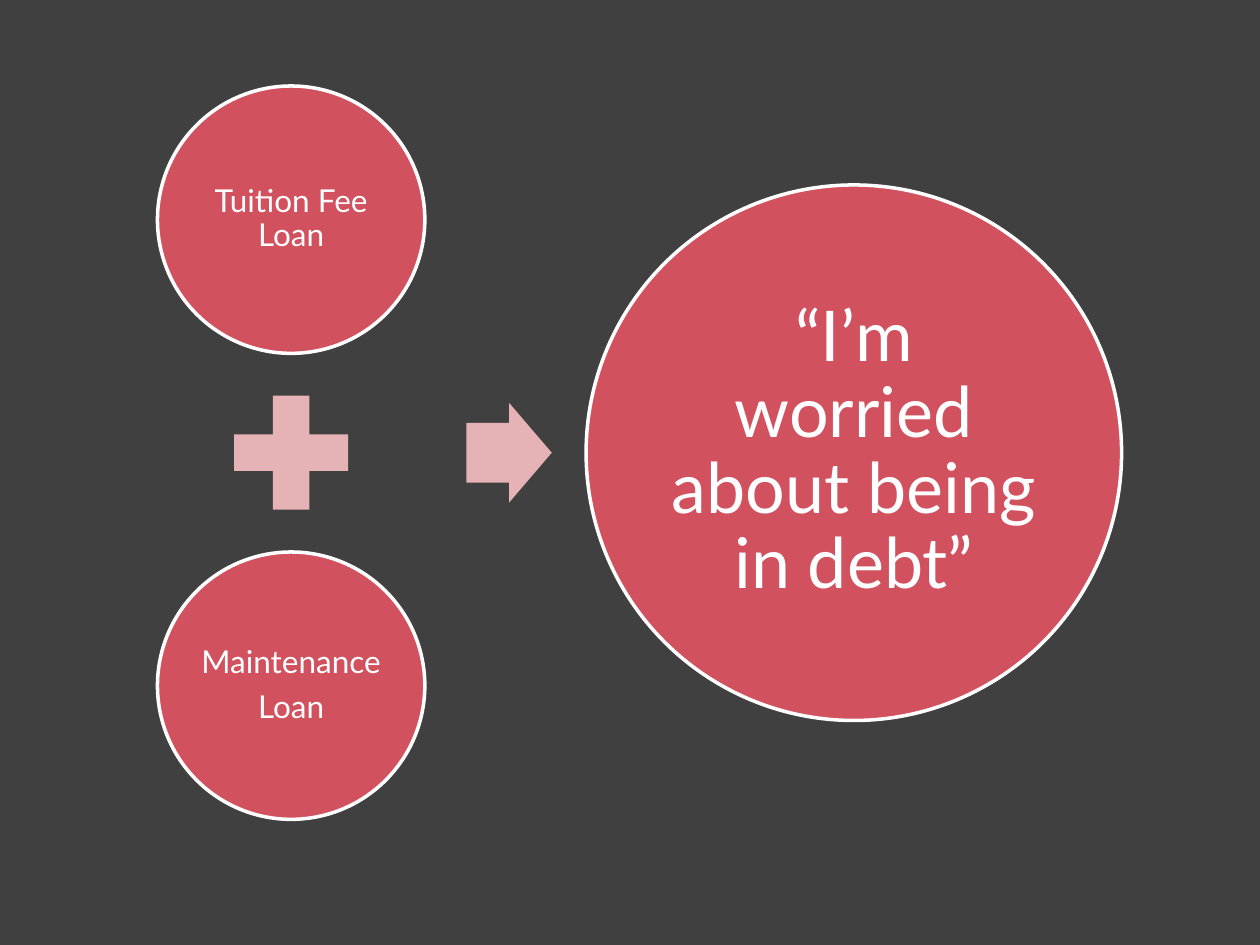
from pptx import Presentation
from pptx.dml.color import RGBColor
from pptx.enum.shapes import MSO_SHAPE as Shape
from pptx.enum.text import MSO_ANCHOR as Anchor, PP_ALIGN as Align
from pptx.util import Pt

LOANS = [["Tuition Fee Loan"], ["Maintenance", "Loan"]]
WORRY = ["“I’m worried about being in debt”"]

THEME = {
    "backdrop": RGBColor(0x40, 0x40, 0x40),
    "circle": RGBColor(0xD2, 0x51, 0x5E),
    "sign": RGBColor(0xE5, 0xB3, 0xB6),
    "light": RGBColor(0xFF, 0xFF, 0xFF),
    "font": "Lato",
    "loan_size": 18,
    "worry_size": 40,
    "outline": 2,
}

SLIDE_W, SLIDE_H = 720, 540
LEFT, MIDDLE = 90, 258.7
LOAN_D, WORRY_D, PLUS_D = 152.8, 306, 88.5
ARROW_W, ARROW_H = 48.8, 57
STACK_GAP, ARROW_GAP, WORRY_GAP = 12.5, 23.7, 19.6


def apply(target, values):
    for name, value in values.items():
        setattr(target, name, value)


def add_part(slide, kind, center_x, center_y, width, height, color):
    part = slide.shapes.add_shape(
        kind, Pt(center_x - width / 2), Pt(center_y - height / 2), Pt(width), Pt(height))
    part.shadow.inherit = False
    part.fill.solid()
    part.fill.fore_color.rgb = color
    part.line.fill.background()
    return part


def add_circle(slide, lines, center_x, center_y, diameter, size, inset):
    circle = add_part(slide, Shape.OVAL, center_x, center_y, diameter, diameter, THEME["circle"])
    circle.line.color.rgb = THEME["light"]
    circle.line.width = Pt(THEME["outline"])
    frame = circle.text_frame
    margins = {f"margin_{side}": Pt(inset) for side in ("left", "top", "right", "bottom")}
    apply(frame, {"word_wrap": True, "vertical_anchor": Anchor.MIDDLE, **margins})
    for index, line in enumerate(lines):
        paragraph = frame.add_paragraph() if index else frame.paragraphs[0]
        paragraph.text = line
        apply(paragraph, {"alignment": Align.CENTER, "line_spacing": 0.9,
                          "space_after": Pt(size * 0.35)})
        apply(paragraph.font, {"name": THEME["font"], "size": Pt(size)})
        paragraph.font.color.rgb = THEME["light"]


def main():
    deck = Presentation()
    apply(deck, {"slide_width": Pt(SLIDE_W), "slide_height": Pt(SLIDE_H)})
    slide = deck.slides.add_slide(deck.slide_layouts[6])
    slide.background.fill.solid()
    slide.background.fill.fore_color.rgb = THEME["backdrop"]

    loan_x = LEFT + LOAN_D / 2
    loan_offset = PLUS_D / 2 + STACK_GAP + LOAN_D / 2
    arrow_left = LEFT + LOAN_D + ARROW_GAP
    worry_left = arrow_left + ARROW_W + WORRY_GAP

    for lines, direction in zip(LOANS, (-1, 1)):
        add_circle(slide, lines, loan_x, MIDDLE + direction * loan_offset,
                   LOAN_D, THEME["loan_size"], 2)
    add_part(slide, Shape.MATH_PLUS, loan_x, MIDDLE, PLUS_D, PLUS_D, THEME["sign"])
    arrow = add_part(slide, Shape.RIGHT_ARROW, arrow_left + ARROW_W / 2, MIDDLE,
                     ARROW_W, ARROW_H, THEME["sign"])
    arrow.adjustments[0] = 0.6
    arrow.adjustments[1] = 0.5
    add_circle(slide, WORRY, worry_left + WORRY_D / 2, MIDDLE,
               WORRY_D, THEME["worry_size"], 4)

    deck.save("out.pptx")


if __name__ == "__main__":
    main()
